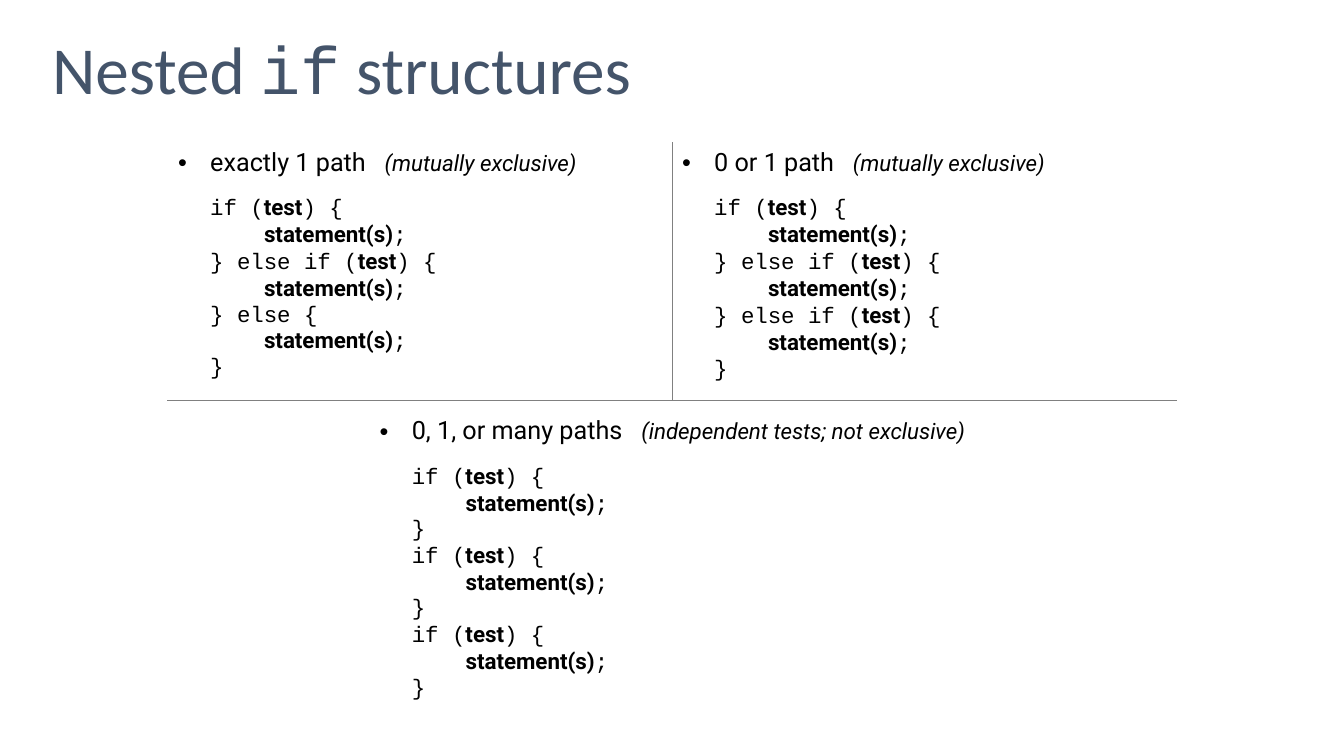
"""Build the slide that compares nested if structures."""
from lxml import etree
from pptx import Presentation
from pptx.dml.color import RGBColor
from pptx.enum.text import MSO_ANCHOR
from pptx.oxml.ns import qn
from pptx.util import Pt

MIDDLE = MSO_ANCHOR.MIDDLE
SLATE = RGBColor(0x44, 0x54, 0x6A)
BLACK = RGBColor(0, 0, 0)
GRAY = RGBColor(0x80, 0x80, 0x80)
SANS, MONO, HEAD = "Roboto", "Courier New", "Calibri"

TITLE = [("Nested ", HEAD), ("if", MONO), (" structures", HEAD)]
TEST, BODY = "test", "statement(s)"
IF = ["if (test) {", "statement(s);"]
ELIF = ["} else if (test) {", "statement(s);"]
ELSE = ["} else {", "statement(s);"]
END = ["}"]
CELLS = [
    {"at": (0, 0), "head": "exactly 1 path   ", "note": "(mutually exclusive)",
     "code": IF + ELIF + ELSE + END, "left": 23, "top": 3.6, "lines": "RB"},
    {"at": (0, 1), "head": "0 or 1 path   ", "note": "(mutually exclusive)",
     "code": IF + ELIF + ELIF + END, "left": 23, "top": 3.6, "lines": "LB"},
    {"at": (1, 0), "head": "0, 1, or many paths   ",
     "note": "(independent tests; not exclusive)",
     "code": (IF + END) * 3, "left": 167, "top": 11.8, "lines": "T"},
]
COLS, ROWS = (360, 360), (183.6, 221.8)
HANG, STEP = 23, 38.4


def add_run(para, text, face, size, color=BLACK, bold=False, italic=False):
    run = para.add_run()
    run.text = text
    font = run.font
    font.name, font.size = face, Pt(size)
    font.bold, font.italic = bold, italic
    font.color.rgb = color


def indent(para, left, first=0):
    props = para._p.get_or_add_pPr()
    props.set("marL", str(Pt(left)))
    props.set("indent", str(Pt(first)))
    return props


def add_code(para, line, left, gap):
    para.line_spacing = 0.8
    para.space_before = Pt(gap)
    indent(para, left + STEP * line.startswith(BODY))
    word = BODY if BODY in line else TEST
    start, found, rest = line.partition(word)
    for text, face in ((start, MONO), (found, SANS), (rest, MONO)):
        if text:
            add_run(para, text, face, 16, bold=face == SANS)


def add_lines(cell, sides):
    props = cell._tc.get_or_add_tcPr()
    for spot, side in enumerate(sides):
        line = etree.Element(qn("a:ln" + side), w=str(Pt(0.5)))
        fill = etree.SubElement(line, qn("a:solidFill"))
        etree.SubElement(fill, qn("a:srgbClr"), val=str(GRAY))
        props.insert(spot, line)


def fill_cell(cell, item):
    cell.margin_top = Pt(item["top"])
    frame = cell.text_frame
    para = frame.paragraphs[0]
    props = indent(para, item["left"], -HANG)
    etree.SubElement(props, qn("a:buFont"), typeface="Arial")
    etree.SubElement(props, qn("a:buChar"), char="•")
    add_run(para, item["head"], SANS, 18)
    add_run(para, item["note"], SANS, 16, italic=True)
    for spot, line in enumerate(item["code"]):
        add_code(frame.add_paragraph(), line, item["left"], 3.6 if spot else 14.6)


def add_title(slide):
    frame = slide.shapes.add_textbox(Pt(30.2), 0, Pt(900), Pt(104.4)).text_frame
    frame.word_wrap = True
    frame.vertical_anchor = MIDDLE
    para = frame.paragraphs[0]
    para.line_spacing = 0.9
    for text, face in TITLE:
        add_run(para, text, face, 48, SLATE)


def add_grid(slide):
    table = slide.shapes.add_table(
        len(ROWS), len(COLS), Pt(120), Pt(102.2), Pt(sum(COLS)), Pt(sum(ROWS))).table
    table.first_row = table.horz_banding = False
    for col, width in zip(table.columns, COLS):
        col.width = Pt(width)
    for row, height in zip(table.rows, ROWS):
        row.height = Pt(height)
    for cell in table.iter_cells():
        cell.fill.background()
    table.cell(1, 0).merge(table.cell(1, 1))
    for item in CELLS:
        cell = table.cell(*item["at"])
        fill_cell(cell, item)
        add_lines(cell, item["lines"])
    add_lines(table.cell(1, 1), "T")


def main():
    deck = Presentation()
    deck.slide_width, deck.slide_height = Pt(960), Pt(540)
    slide = deck.slides.add_slide(deck.slide_layouts[6])
    add_title(slide)
    add_grid(slide)
    deck.save("out.pptx")


if __name__ == "__main__":
    main()
